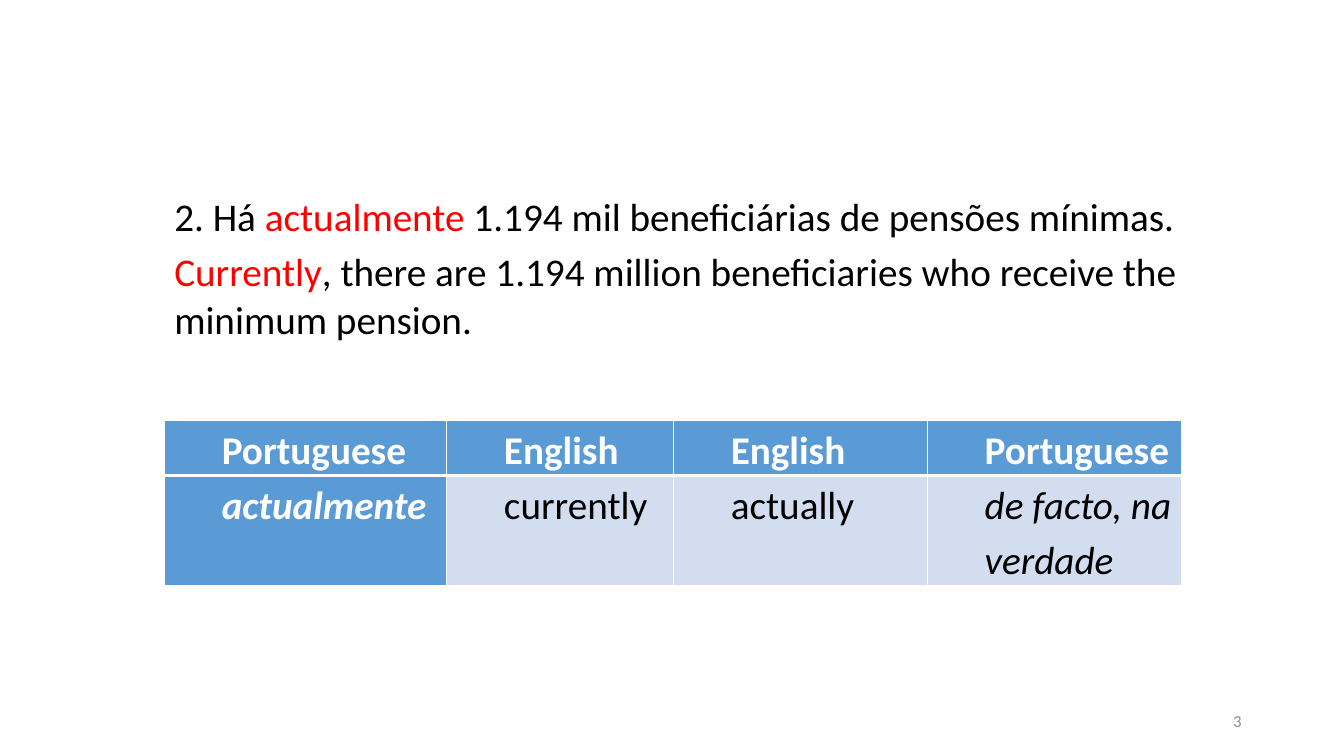
"""Build a slide on the false friend "actualmente" with a translation table."""
from dataclasses import dataclass

from lxml import etree
from pptx import Presentation
from pptx.dml.color import RGBColor
from pptx.enum import text
from pptx.oxml import ns
from pptx.util import Pt


@dataclass(frozen=True)
class Theme:
    font: str = "Calibri"
    size: int = 28
    number_size: int = 12
    ink: str = "000000"
    accent: str = "FF0000"
    white: str = "FFFFFF"
    grey: str = "8C8C8C"
    header: str = "5B9BD5"
    band: str = "D2DEEF"


theme = Theme()


def add_span(para, words, color, size=theme.size, **formats):
    span = para.add_run()
    span.text = words
    span.font.color.rgb = RGBColor.from_string(color)
    for name, value in {"name": theme.font, "size": Pt(size), **formats}.items():
        setattr(span.font, name, value)


def add_border(cell, side, width):
    line = etree.SubElement(cell._tc.get_or_add_tcPr(), ns.qn(f"a:{side}"), w=str(Pt(width)))
    fill = etree.SubElement(line, ns.qn("a:solidFill"))
    etree.SubElement(fill, ns.qn("a:srgbClr"), val=theme.white)


deck = Presentation()
deck.slide_width, deck.slide_height = Pt(960), Pt(540)
page = deck.slides.add_slide(deck.slide_layouts[6])

columns = [201.6, 162, 181.4, 181.4]
rows = [39.3, 78.6]
entries = [
    ["Portuguese", "English", "English", "Portuguese"],
    ["actualmente", "currently", "actually", "de facto, na verdade"],
]
italics = {"actualmente", "de facto, na verdade"}
table = page.shapes.add_table(
    len(rows), len(columns), Pt(117.4), Pt(300.2), Pt(sum(columns)), Pt(sum(rows))
).table
for column, width in zip(table.columns, columns):
    column.width = Pt(width)
for row, height in zip(table.rows, rows):
    row.height = Pt(height)

cell_format = {"margin_left": Pt(5), "margin_right": Pt(5), "margin_top": 0, "margin_bottom": 0}
for row, labels in enumerate(entries):
    for column, label in enumerate(labels):
        cell = table.cell(row, column)
        for name, value in cell_format.items():
            setattr(cell, name, value)
        rule_side = "lnT" if row else "lnB"
        for side in ("lnL", "lnR", "lnT", "lnB"):
            add_border(cell, side, 3 if side == rule_side else 1)
        heading = row == 0 or column == 0
        cell.fill.solid()
        cell.fill.fore_color.rgb = RGBColor.from_string(theme.header if heading else theme.band)
        para = cell.text_frame.paragraphs[0]
        para.line_spacing = 1.15
        para.alignment = text.PP_ALIGN.LEFT if " " in label else text.PP_ALIGN.JUSTIFY
        para._p.get_or_add_pPr().set("marL", str(Pt(36)))
        add_span(para, label, theme.white if heading else theme.ink,
                 bold=heading, italic=label in italics)

sentences = [
    [("2. Há\u00a0", theme.ink), ("actualmente", theme.accent),
     ("\u00a01.194 mil beneficiárias de pensões mínimas.", theme.ink)],
    [("Currently", theme.accent),
     (", there are 1.194 million beneficiaries who receive the minimum pension.", theme.ink)],
]
number = [[("3", theme.grey)]]
boxes = [
    ((117.4, 133.2, 748, 115.2), sentences, theme.size, text.PP_ALIGN.LEFT),
    ((678, 500.5, 216, 28.8), number, theme.number_size, text.PP_ALIGN.RIGHT),
]
for place, lines, size, alignment in boxes:
    frame = page.shapes.add_textbox(*map(Pt, place)).text_frame
    frame.word_wrap = True
    frame.vertical_anchor = text.MSO_ANCHOR.MIDDLE
    for index, spans in enumerate(lines):
        para = frame.add_paragraph() if index else frame.paragraphs[0]
        para.alignment = alignment
        if index:
            para.space_before = Pt(6)
        for words, color in spans:
            add_span(para, words, color, size)

deck.save("out.pptx")
